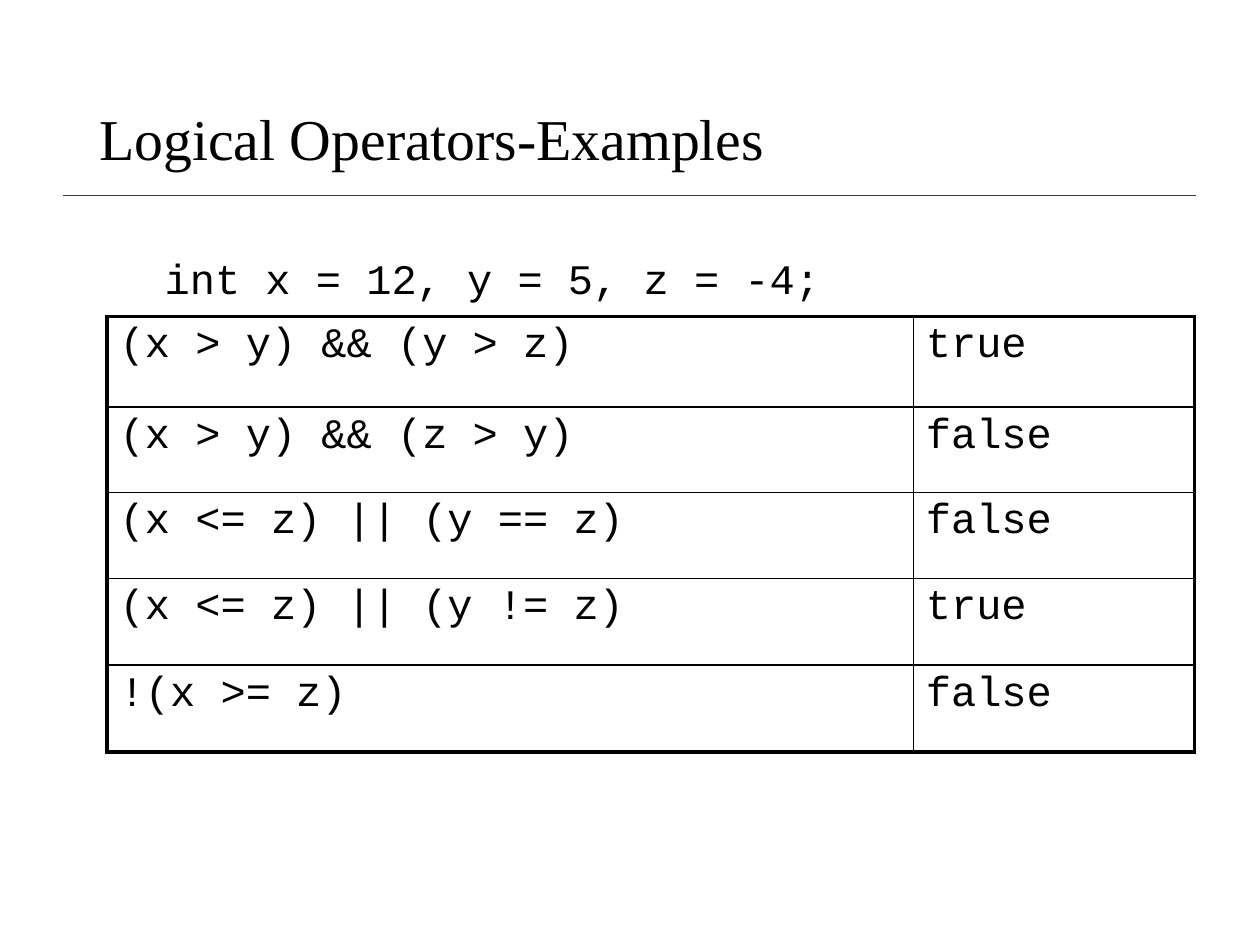
from typing import NamedTuple

from lxml.etree import SubElement
from pptx import Presentation
from pptx.dml.color import RGBColor
from pptx.enum.shapes import MSO_CONNECTOR
from pptx.enum.text import MSO_ANCHOR, MSO_AUTO_SIZE, PP_ALIGN
from pptx.oxml.ns import qn
from pptx.util import Cm, Pt

INK = "000000"
CODE = "Courier New"
THICK, THIN = 2.25, 1


class Case(NamedTuple):
    test: str
    value: str


CASES = [
    Case("(x > y) && (y > z)", "true"),
    Case("(x > y) && (z > y)", "false"),
    Case("(x <= z) || (y == z)", "false"),
    Case("(x <= z) || (y != z)", "true"),
    Case("!(x >= z)", "false"),
]
WIDTHS = (16.25, 5.67)
HEIGHTS = (1.82, 1.73, 1.73, 1.75, 1.75)


def color(code: str) -> RGBColor:
    return RGBColor.from_string(code)


def write(frame, text: str, *, font: str = CODE, size: float = 24,
          space: float = 1, before: float = 0):
    """Put one formatted paragraph in a text frame."""
    para = frame.paragraphs[0]
    para.alignment = PP_ALIGN.LEFT
    para.line_spacing = space
    para.space_before = Pt(before)
    run = para.add_run()
    run.text = text
    run.font.name = font
    run.font.size = Pt(size)
    run.font.color.rgb = color(INK)
    return para


def border(cell, sides: dict[str, float]) -> None:
    """Draw the cell's edges, ahead of its fill in the XML."""
    props = cell._tc.get_or_add_tcPr()
    for spot, (side, width) in enumerate(sides.items()):
        line = SubElement(props, qn(f"a:ln{side}"), w=str(Pt(width)))
        fill = SubElement(line, qn("a:solidFill"))
        SubElement(fill, qn("a:srgbClr"), val=INK)
        props.insert(spot, line)


def add_rule(slide) -> None:
    rule = slide.shapes.add_connector(
        MSO_CONNECTOR.STRAIGHT, Cm(1.27), Cm(3.94), Cm(24.1), Cm(3.94))
    rule.line.color.rgb = color("404040")
    rule.line.width = Pt(1)
    SubElement(rule._element.spPr, qn("a:effectLst"))


def add_title(slide, text: str) -> None:
    title = slide.shapes.title
    title.left, title.top = Cm(1.75), Cm(1.02)
    title.width, title.height = Cm(21.9), Cm(3.68)
    frame = title.text_frame
    frame.auto_size = MSO_AUTO_SIZE.NONE
    frame.vertical_anchor = MSO_ANCHOR.MIDDLE
    write(frame, text, font="Times New Roman", size=33, space=0.9)


def add_code(slide, text: str) -> None:
    box = slide.shapes.add_textbox(Cm(2.11), Cm(5.16), Cm(20.9), Cm(2.08))
    box.text_frame.word_wrap = True
    para = write(box.text_frame, text, space=0.8, before=4.8)
    para._p.get_or_add_pPr().set("marL", str(Cm(0.96)))


def add_cases(slide, cases: list[Case]) -> None:
    table = slide.shapes.add_table(
        len(cases), len(WIDTHS), Cm(2.16), Cm(6.38),
        Cm(sum(WIDTHS)), Cm(sum(HEIGHTS))).table
    table.first_row = table.horz_banding = False
    for col, width in zip(table.columns, WIDTHS):
        col.width = Cm(width)
    for row, height in zip(table.rows, HEIGHTS):
        row.height = Cm(height)
    last = len(cases) - 1
    for r, case in enumerate(cases):
        for c, text in enumerate(case):
            cell = table.cell(r, c)
            cell.fill.background()
            write(cell.text_frame, text)
            # Outer edges are thick, inner ones thin
            border(cell, {
                "L": THICK if c == 0 else THIN,
                "R": THICK if c == 1 else THIN,
                "T": THICK if r == 0 else THIN,
                "B": THICK if r == last else THIN,
            })


def main() -> None:
    deck = Presentation()
    deck.slide_width, deck.slide_height = Cm(25.4), Cm(19.05)
    slide = deck.slides.add_slide(deck.slide_layouts[5])

    # Heading
    add_rule(slide)
    add_title(slide, "Logical Operators-Examples")

    # Variables and the tests on them
    add_code(slide, "int x = 12, y = 5, z = -4;")
    add_cases(slide, CASES)
    deck.save("out.pptx")


if __name__ == "__main__":
    main()
